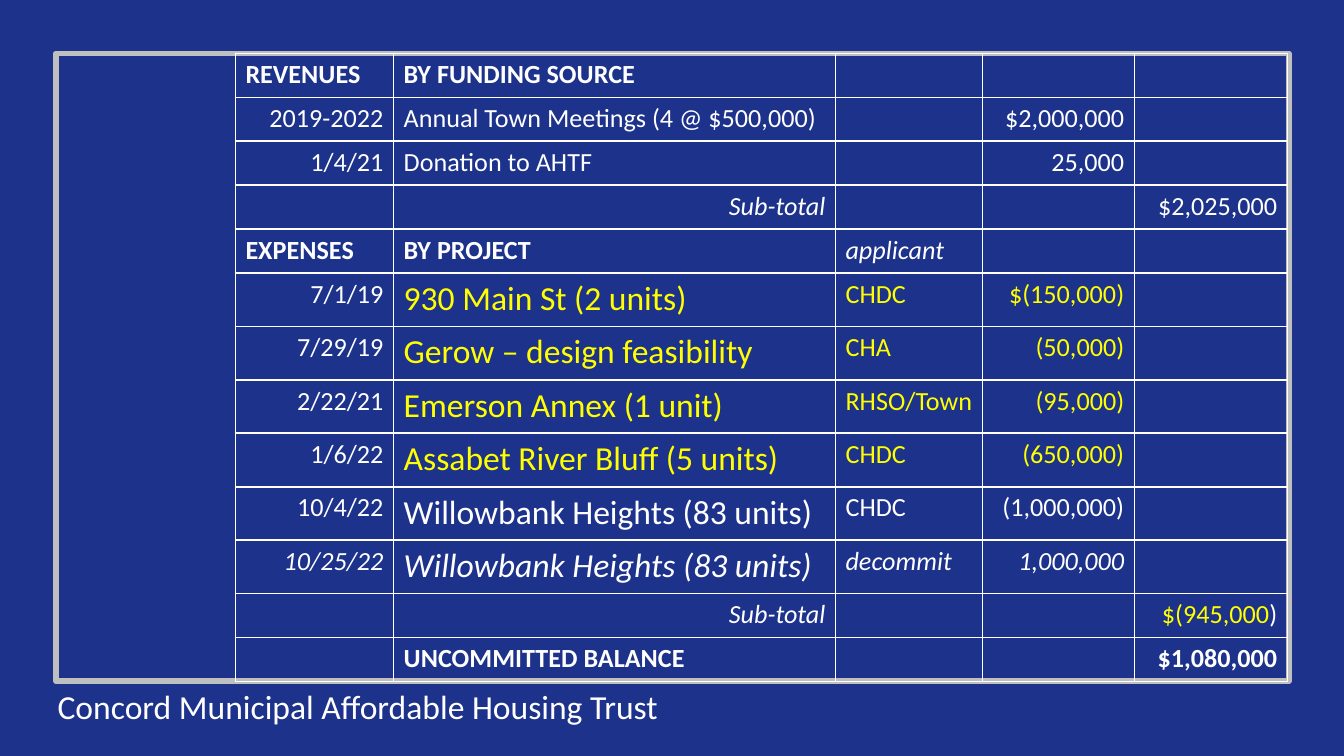
import lxml.etree
import pptx
import pptx.dml.color
import pptx.enum.shapes
import pptx.enum.text
import pptx.oxml.ns
import pptx.util

Cm = pptx.util.Cm
Pt = pptx.util.Pt
RGBColor = pptx.dml.color.RGBColor
Align = pptx.enum.text.PP_ALIGN
qn = pptx.oxml.ns.qn

NAVY = RGBColor(0x1D, 0x32, 0x8B)
WHITE = RGBColor(0xFF, 0xFF, 0xFF)
YELLOW = RGBColor(0xFF, 0xFF, 0x00)
SILVER = RGBColor(0xBF, 0xBF, 0xBF)

BODY_SIZE, PROJECT_SIZE = 14, 18
COLUMN_WIDTHS = (2.99, 8.35, 2.78, 2.87, 2.89)
ROW_HEIGHT, PROJECT_HEIGHT = 0.83, 1.01

# Kind of row, then date, description, applicant, amount, total
LEDGER = [
    ("heading", "REVENUES", "BY FUNDING SOURCE", "", "", ""),
    ("revenue", "2019-2022", "Annual Town Meetings (4 @ $500,000)", "", "$2,000,000", ""),
    ("revenue", "1/4/21", "Donation to AHTF", "", "25,000", ""),
    ("subtotal", "", "Sub-total", "", "", "$2,025,000"),
    ("heading", "EXPENSES", "BY PROJECT", "applicant", "", ""),
    ("funded", "7/1/19", "930 Main St (2 units)", "CHDC", "$(150,000)", ""),
    ("funded", "7/29/19", "Gerow – design feasibility", "CHA", "(50,000)", ""),
    ("funded", "2/22/21", "Emerson Annex (1 unit)", "RHSO/Town", "(95,000)", ""),
    ("funded", "1/6/22", "Assabet River Bluff (5 units)", "CHDC", "(650,000)", ""),
    ("planned", "10/4/22", "Willowbank Heights (83 units)", "CHDC", "(1,000,000)", ""),
    ("withdrawn", "10/25/22", "Willowbank Heights (83 units)", "decommit", "1,000,000", ""),
    ("subtotal", "", "Sub-total", "", "", (("$(945,000", YELLOW), (")", WHITE))),
    ("heading", "", "UNCOMMITTED BALANCE", "", "", "$1,080,000"),
]
PROJECT_KINDS = ("funded", "planned", "withdrawn")


def write_text(frame, text, size=BODY_SIZE, color=WHITE, bold=False, italic=False,
               align=Align.LEFT):
    """Append text to the first paragraph; an empty text only sets the line height."""
    paragraph = frame.paragraphs[0]
    paragraph.alignment = align
    if not text:
        end = lxml.etree.SubElement(paragraph._p, qn("a:endParaRPr"))
        end.set("sz", str(size * 100))
        return
    run = paragraph.add_run()
    run.text = text
    run.font.name = "Calibri"
    run.font.size = Pt(size)
    run.font.bold = bold
    run.font.italic = italic
    run.font.color.rgb = color


def draw_borders(cell):
    properties = cell._tc.get_or_add_tcPr()
    for position, side in enumerate(("a:lnL", "a:lnR", "a:lnT", "a:lnB")):
        line = lxml.etree.Element(qn(side), w=str(Pt(1)))
        fill = lxml.etree.SubElement(line, qn("a:solidFill"))
        lxml.etree.SubElement(fill, qn("a:srgbClr"), val=str(WHITE))
        properties.insert(position, line)


def cell_format(kind, column, text):
    """Work out the format of a ledger cell from its row kind and column."""
    applicant_label = kind == "heading" and column == 2
    right = (column > 2 or (column == 0 and kind != "heading")
             or (column == 1 and kind == "subtotal"))
    return {
        "size": PROJECT_SIZE if kind in PROJECT_KINDS and column == 1 else BODY_SIZE,
        "color": YELLOW if kind == "funded" and column in (1, 2, 3) else WHITE,
        "bold": kind == "heading" and not applicant_label,
        "italic": (kind == "withdrawn" or applicant_label
                   or (kind == "subtotal" and column == 1)),
        "align": Align.RIGHT if right else Align.LEFT,
    }


def add_frame(slide, left, top, width, height):
    frame = slide.shapes.add_shape(pptx.enum.shapes.MSO_SHAPE.RECTANGLE,
                                   left, top, width, height)
    frame.shadow.inherit = False
    frame.fill.background()
    frame.line.color.rgb = SILVER
    frame.line.width = Pt(3)


def add_ledger(slide, left, top, width, height):
    ledger = slide.shapes.add_table(len(LEDGER), len(COLUMN_WIDTHS),
                                    left, top, width, height).table
    ledger.first_row = False
    ledger.horz_banding = False
    for column, column_width in zip(ledger.columns, COLUMN_WIDTHS):
        column.width = Cm(column_width)

    for row_index, (kind, *entries) in enumerate(LEDGER):
        row_height = PROJECT_HEIGHT if kind in PROJECT_KINDS else ROW_HEIGHT
        ledger.rows[row_index].height = Cm(row_height)
        for column_index, entry in enumerate(entries):
            cell = ledger.cell(row_index, column_index)
            cell.margin_left = cell.margin_right = Cm(0.19)
            cell.margin_top = cell.margin_bottom = Cm(0.1)
            cell.fill.background()
            draw_borders(cell)
            style = cell_format(kind, column_index, entry)
            parts = ((entry, style["color"]),) if isinstance(entry, str) else entry
            for text, color in parts:
                write_text(cell.text_frame, text, **{**style, "color": color})


def add_caption(slide, left, top, width, height):
    caption = slide.shapes.add_textbox(left, top, width, height).text_frame
    caption.word_wrap = True
    caption.auto_size = pptx.enum.text.MSO_AUTO_SIZE.SHAPE_TO_FIT_TEXT
    write_text(caption, "Concord Municipal Affordable Housing Trust", size=18)


def main():
    deck = pptx.Presentation()
    deck.slide_width, deck.slide_height = Cm(25.4), Cm(14.29)
    slide = deck.slides.add_slide(deck.slide_layouts[6])
    slide.background.fill.solid()
    slide.background.fill.fore_color.rgb = NAVY

    # Border, ledger of the trust, name of the trust
    add_frame(slide, Cm(1.06), Cm(1.01), Cm(23.3), Cm(11.87))
    add_ledger(slide, Cm(4.45), Cm(1.01), Cm(19.88), Cm(11.87))
    add_caption(slide, Cm(0.84), Cm(12.85), Cm(13.97), Cm(1.02))
    deck.save("out.pptx")


if __name__ == "__main__":
    main()
